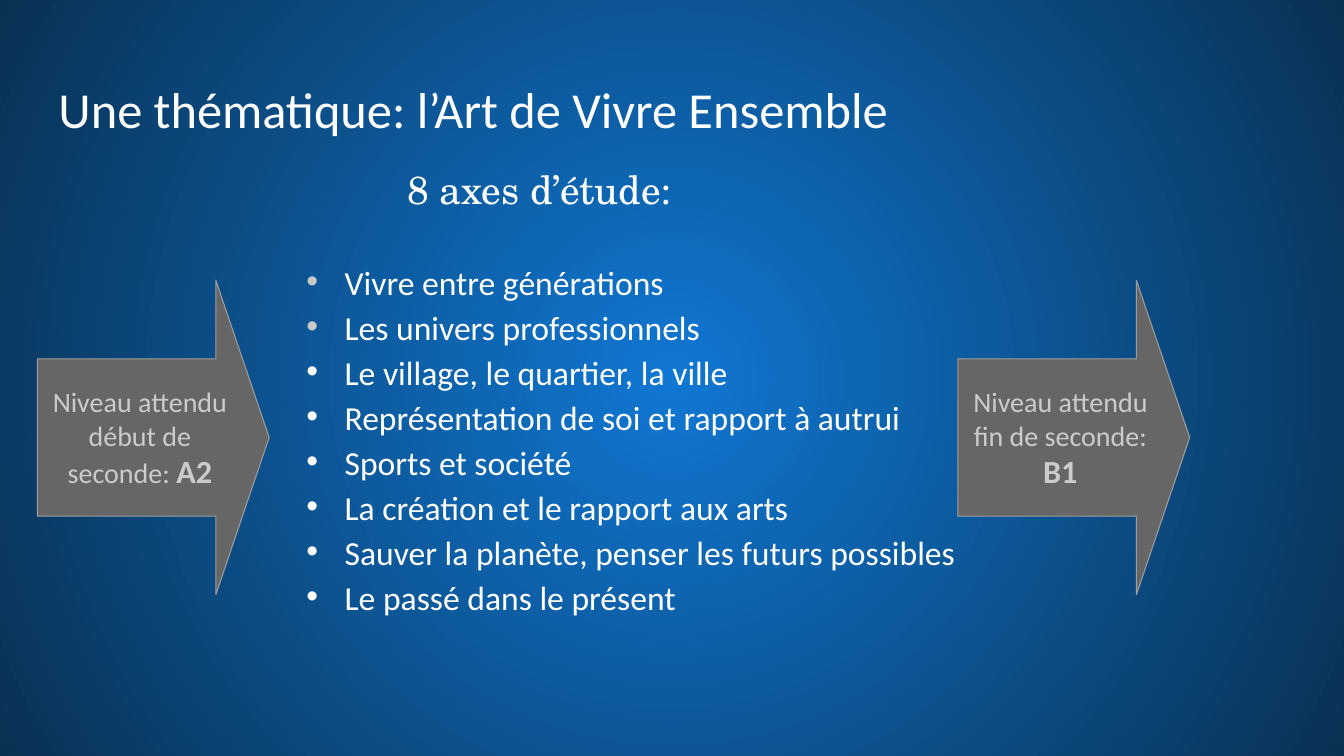
"""Build the slide on the theme "l'Art de Vivre Ensemble" and its eight study topics."""
from lxml.etree import SubElement
from pptx import Presentation
from pptx.dml.color import RGBColor as RGB
from pptx.enum.shapes import MSO_SHAPE
from pptx.enum.text import MSO_ANCHOR, PP_ALIGN
from pptx.oxml.ns import qn
from pptx.util import Inches, Pt

WHITE = RGB(0xFF, 0xFF, 0xFF)
SILVER = RGB(0xCA, 0xCA, 0xCA)
LIGHT = RGB(0xCC, 0xCC, 0xCC)
GREY = RGB(0x66, 0x66, 0x66)
EDGE = RGB(0x9E, 0x9E, 0x9E)
BRIGHT_BLUE = RGB(0x10, 0x77, 0xD2)
DARK_BLUE = RGB(0x09, 0x31, 0x53)

TOPICS = [
    "Vivre entre générations",
    "Les univers professionnels",
    "Le village, le quartier, la ville",
    "Représentation de soi et rapport à autrui",
    "Sports et société",
    "La création et le rapport aux arts",
    "Sauver la planète, penser les futurs possibles",
    "Le passé dans le présent",
]
LEVELS = [
    (0.37, "Niveau attendu début de seconde: ", "A2"),
    (9.5, "Niveau attendu fin de seconde: ", "B1"),
]


def style(r, size, color, font="Calibri", bold=False):
    r.font.size = Pt(size)
    r.font.name = font
    r.font.bold = bold
    r.font.color.rgb = color


def add_text(left, top, width, height, inset_x, inset_y):
    tf = s.shapes.add_textbox(Inches(left), Inches(top), Inches(width), Inches(height)).text_frame
    tf.word_wrap = True
    tf.margin_left = tf.margin_right = Inches(inset_x)
    tf.margin_top = tf.margin_bottom = Inches(inset_y)
    return tf


prs = Presentation()
prs.slide_width, prs.slide_height = Inches(13.33), Inches(7.5)
s = prs.slides.add_slide(prs.slide_layouts[6])

fill = s.background.fill
fill.gradient()
for stop, color in zip(fill.gradient_stops, (BRIGHT_BLUE, DARK_BLUE)):
    stop.color.rgb = color
grad = s.element.find(".//" + qn("a:gradFill"))
grad.remove(grad.find(qn("a:lin")))
circle = SubElement(grad, qn("a:path"), path="circle")
SubElement(circle, qn("a:fillToRect"), {side: "50000" for side in "ltrb"})

p = add_text(0.45, 0.65, 12.42, 0.83, 0.13, 0.13).paragraphs[0]
p.text = "Une thématique: l’Art de Vivre Ensemble"
style(p.runs[0], 36, WHITE)

tf = add_text(2.94, 1.72, 9.74, 4.97, 0.1, 0.05)
p = tf.paragraphs[0]
p.text = "8 axes d’étude:"
p.line_spacing = 0.7
p.space_after = Pt(44)
p._p.get_or_add_pPr().set("marL", str(Inches(1)))
style(p.runs[0], 28, WHITE, "TeX Gyre Schola")

for i, topic in enumerate(TOPICS):
    p = tf.add_paragraph()
    p.text = topic
    p.line_spacing = 0.7
    p.space_before = Pt(12 if i else 0)
    pPr = p._p.get_or_add_pPr()
    pPr.set("marL", str(Inches(0.38)))
    pPr.set("indent", str(-Inches(0.38)))
    bullet_color = SILVER if i < 2 else WHITE
    SubElement(SubElement(pPr, qn("a:buClr")), qn("a:srgbClr"), val=str(bullet_color))
    SubElement(pPr, qn("a:buFont"), typeface="Arial")
    SubElement(pPr, qn("a:buChar"), char="•")
    style(p.runs[0], 24, WHITE)

for left, label, level in LEVELS:
    sp = s.shapes.add_shape(MSO_SHAPE.RIGHT_ARROW, Inches(left), Inches(2.78), Inches(2.3), Inches(3.12))
    sp.adjustments[0], sp.adjustments[1] = 0.5, 0.23
    sp.shadow.inherit = False
    sp.fill.solid()
    sp.fill.fore_color.rgb = GREY
    sp.line.color.rgb = EDGE
    sp.line.width = Pt(0.75)
    tf = sp.text_frame
    tf.word_wrap = True
    tf.vertical_anchor = MSO_ANCHOR.MIDDLE
    tf.margin_left = tf.margin_right = tf.margin_top = tf.margin_bottom = Inches(0.1)
    p = tf.paragraphs[0]
    p.text = label
    p.alignment = PP_ALIGN.CENTER
    style(p.runs[0], 20, LIGHT)
    r = p.add_run()
    r.text = level
    style(r, 23, LIGHT, bold=True)

prs.save("out.pptx")
